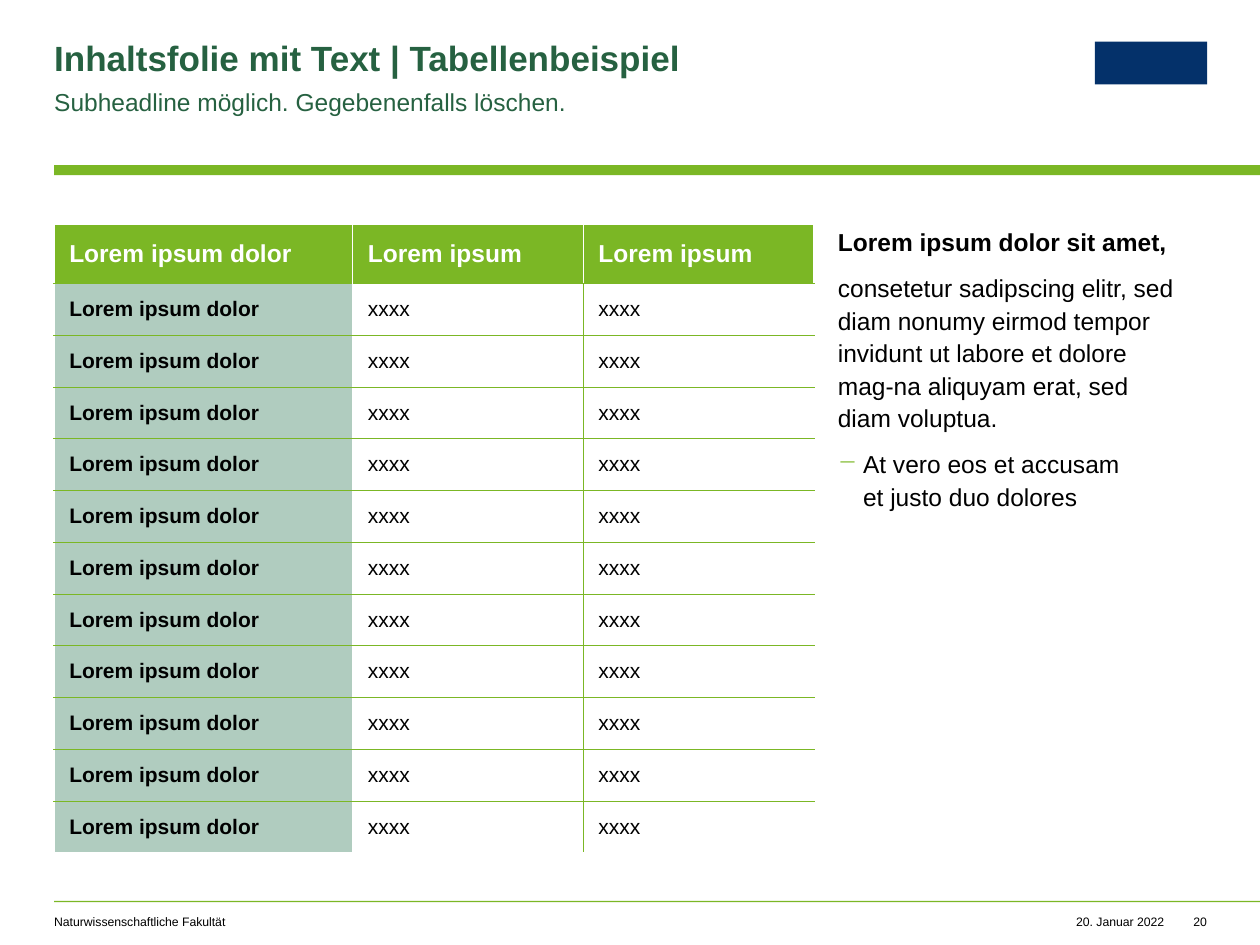
from dataclasses import dataclass, replace
from typing import Optional

from lxml import etree
from pptx import Presentation
from pptx.dml.color import RGBColor
from pptx.enum import shapes, text
from pptx.oxml import ns
from pptx.util import Inches, Pt

GREEN = RGBColor(0x7B, 0xB7, 0x25)
DARK_GREEN = RGBColor(0x26, 0x61, 0x41)
PALE_GREEN = RGBColor(0xB0, 0xCC, 0xBF)
NAVY = RGBColor(0x04, 0x31, 0x6A)
BLACK = RGBColor(0, 0, 0)
WHITE = RGBColor(0xFF, 0xFF, 0xFF)
FONT = "Arial"
LEFT = 0.43
BODY_ROWS = 11
HEADER_HEIGHT = 0.47
TABLE_HEIGHT = 4.99
COLUMN_WIDTHS = (2.37, 1.83, 1.83)
HEADER = ("Lorem ipsum dolor", "Lorem ipsum", "Lorem ipsum")
BODY_ROW = ("Lorem ipsum dolor", "xxxx", "xxxx")


@dataclass(frozen=True)
class Style:
    size: float
    color: RGBColor = BLACK
    bold: bool = False
    line_spacing: Optional[float] = None
    space_after: float = 0
    align: text.PP_ALIGN = text.PP_ALIGN.LEFT


@dataclass(frozen=True)
class Box:
    left: float
    top: float
    width: float
    height: float

    def lengths(self) -> list:
        return [Inches(n) for n in (self.left, self.top, self.width, self.height)]


@dataclass(frozen=True)
class Label:
    box: Box
    lines: tuple
    right_inset: float = 0
    wrap: bool = True
    grow: bool = True


@dataclass(frozen=True)
class Border:
    color: RGBColor
    width: float


FOOTER = Style(7)
FOOTER_RIGHT = replace(FOOTER, align=text.PP_ALIGN.RIGHT)
TITLE = Style(20, DARK_GREEN, True, 0.9)
COPY = Style(14, line_spacing=1.1, space_after=8)
SUBTITLE = replace(COPY, color=DARK_GREEN)
GREEN_LINE = Border(GREEN, 0.25)
WHITE_LINE = Border(WHITE, 1)
WHITE_THIN = Border(WHITE, 0.5)

BARS = (Box(LEFT, 1.31, 9.57, 0.08), Box(LEFT, 7.15, 9.57, 0.01))
LOGO_PLACE = Box(8.69, 0.33, 0.89, 0.34)
SIDE_TEXT = Label(
    Box(6.65, 1.78, 2.93, 5),
    (
        ("Lorem ipsum dolor sit amet,", replace(COPY, bold=True)),
        ("consetetur sadipscing elitr, sed diam nonumy eirmod tempor invidunt "
         "ut labore et dolore mag-na aliquyam erat, sed diam voluptua.", COPY),
        ("At vero eos et accusam\vet justo duo dolores", COPY),
    ),
    right_inset=0.2,
    grow=False,
)
LABELS = (
    Label(Box(8.53, 7.26, 0.71, 0.12), (("20. Januar 2022", FOOTER_RIGHT),), wrap=False),
    Label(Box(LEFT, 7.26, 4.49, 0.12), (("Naturwissenschaftliche Fakultät", FOOTER),)),
    Label(Box(9.38, 7.26, 0.2, 0.12), (("20", FOOTER_RIGHT),), wrap=False),
    Label(Box(LEFT, 0.33, 5.61, 0.3), (("Inhaltsfolie mit Text | Tabellenbeispiel", TITLE),)),
    Label(Box(LEFT, 0.67, 5.61, 0.24),
          (("Subheadline möglich. Gegebenenfalls löschen.", SUBTITLE),), right_inset=0.39),
)


def write_paragraph(paragraph, content: str, style: Style) -> None:
    paragraph.text = content
    paragraph.alignment = style.align
    paragraph.space_after = Pt(style.space_after)
    if style.line_spacing:
        paragraph.line_spacing = style.line_spacing
    for run in paragraph.runs:
        run.font.name = FONT
        run.font.size = Pt(style.size)
        run.font.bold = style.bold
        run.font.color.rgb = style.color


def add_color(parent, color: RGBColor) -> None:
    etree.SubElement(parent, ns.qn("a:srgbClr")).set("val", str(color))


def add_bullet(paragraph, character: str, indent: float) -> None:
    properties = paragraph._p.get_or_add_pPr()
    properties.set("marL", str(Inches(indent)))
    properties.set("indent", str(-Inches(indent)))
    add_color(etree.SubElement(properties, ns.qn("a:buClr")), GREEN)
    etree.SubElement(properties, ns.qn("a:buChar")).set("char", character)


def add_block(slide, box: Box, color: RGBColor) -> None:
    shape = slide.shapes.add_shape(shapes.MSO_SHAPE.RECTANGLE, *box.lengths())
    shape.shadow.inherit = False
    shape.fill.solid()
    shape.fill.fore_color.rgb = color
    shape.line.fill.background()


def add_label(slide, label: Label):
    frame = slide.shapes.add_textbox(*label.box.lengths()).text_frame
    frame.margin_left = frame.margin_top = frame.margin_bottom = 0
    frame.margin_right = Inches(label.right_inset)
    frame.word_wrap = label.wrap
    sizes = text.MSO_AUTO_SIZE
    frame.auto_size = sizes.SHAPE_TO_FIT_TEXT if label.grow else sizes.NONE
    for index, (content, style) in enumerate(label.lines):
        paragraph = frame.add_paragraph() if index else frame.paragraphs[0]
        write_paragraph(paragraph, content, style)
    return frame


def vertical_border(row: int, edge: int) -> Border:
    if edge in (0, len(COLUMN_WIDTHS)):
        return WHITE_LINE
    if row == 0:
        return WHITE_THIN
    return WHITE_LINE if edge == 1 else GREEN_LINE


def horizontal_border(edge: int) -> Border:
    return WHITE_LINE if edge in (0, BODY_ROWS + 1) else GREEN_LINE


def draw_borders(cell, row: int, column: int) -> None:
    borders = {
        "a:lnL": vertical_border(row, column),
        "a:lnR": vertical_border(row, column + 1),
        "a:lnT": horizontal_border(row),
        "a:lnB": horizontal_border(row + 1),
    }
    properties = cell._tc.get_or_add_tcPr()
    for tag, border in borders.items():
        line = etree.SubElement(properties, ns.qn(tag))
        line.set("w", str(Pt(border.width)))
        add_color(etree.SubElement(line, ns.qn("a:solidFill")), border.color)


def fill_cell(cell, row: int, column: int, content: str) -> None:
    draw_borders(cell, row, column)
    if row and column:
        cell.fill.background()
    else:
        cell.fill.solid()
        cell.fill.fore_color.rgb = PALE_GREEN if row else GREEN
    cell.vertical_anchor = text.MSO_ANCHOR.MIDDLE
    cell.margin_left = cell.margin_right = Inches(0.12)
    cell.margin_top = cell.margin_bottom = Inches(0.04)
    style = Style(12, bold=column == 0) if row else Style(14, WHITE, True)
    write_paragraph(cell.text_frame.paragraphs[0], content, style)


def add_sample_table(slide) -> None:
    box = Box(LEFT, 1.78, sum(COLUMN_WIDTHS), TABLE_HEIGHT)
    table = slide.shapes.add_table(BODY_ROWS + 1, len(COLUMN_WIDTHS), *box.lengths()).table
    table.horz_banding = False
    table.first_row = False
    for column, width in zip(table.columns, COLUMN_WIDTHS):
        column.width = Inches(width)
    body_height = (TABLE_HEIGHT - HEADER_HEIGHT) / BODY_ROWS
    for row, contents in enumerate([HEADER] + [BODY_ROW] * BODY_ROWS):
        table.rows[row].height = Inches(body_height if row else HEADER_HEIGHT)
        for column, content in enumerate(contents):
            fill_cell(table.cell(row, column), row, column, content)


def main() -> None:
    presentation = Presentation()
    presentation.slide_width = Inches(10)
    presentation.slide_height = Inches(7.5)
    slide = presentation.slides.add_slide(presentation.slide_layouts[6])
    for bar in BARS:
        add_block(slide, bar, GREEN)
    add_block(slide, LOGO_PLACE, NAVY)
    for label in LABELS:
        add_label(slide, label)
    side_frame = add_label(slide, SIDE_TEXT)
    add_bullet(side_frame.paragraphs[-1], "−", 0.2)
    add_sample_table(slide)
    presentation.save("out.pptx")


if __name__ == "__main__":
    main()
